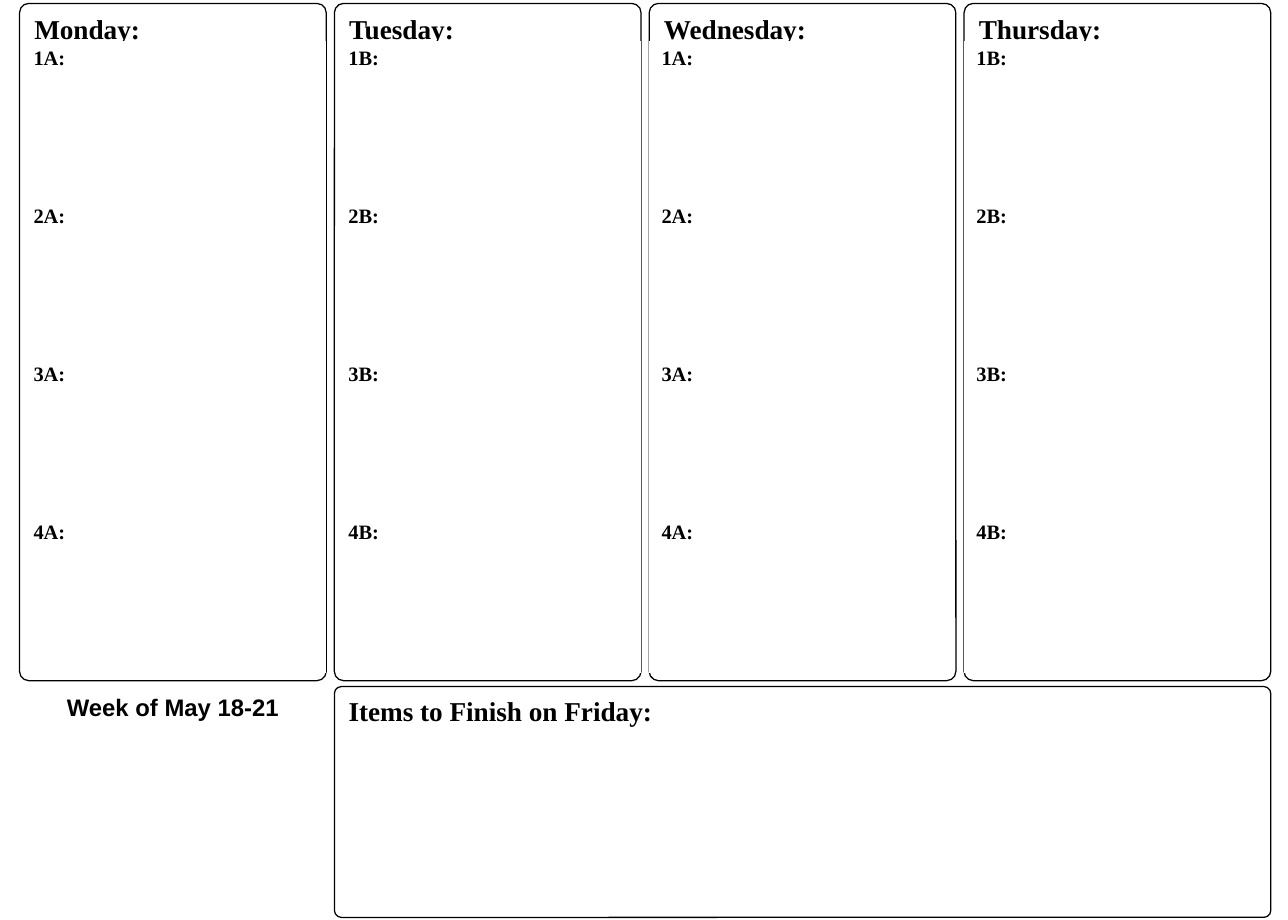
import lxml.etree
import pptx
import pptx.dml.color
import pptx.enum.shapes
import pptx.enum.text
import pptx.oxml.ns
import pptx.util

Pt = pptx.util.Pt
COLORS = {"ink": "000000", "paper": "FFFFFF"}
SERIF, SANS = "Times New Roman", "Arial"
HEADING = {"name": SERIF, "size": Pt(16), "bold": True}
PERIOD = {"name": SERIF, "size": Pt(12), "bold": True}
WEEK = {"name": SANS, "size": Pt(14), "bold": True}
FRAME = {
    "margin_left": Pt(7.2), "margin_right": Pt(7.2),
    "margin_top": Pt(3.6), "margin_bottom": Pt(3.6),
    "vertical_anchor": pptx.enum.text.MSO_ANCHOR.TOP,
}

LEFT, TOP, PITCH = 11.5, 2, 184.8
PANEL_WIDTH, PANEL_HEIGHT = 180, 397.5
TABLE_TOP, ROW_HEIGHT, PERIODS = 24, 92.7, 4
FOOTER_TOP, FOOTER_HEIGHT = 403, 135.5
# Day, block letter, table offset from the panel, table width
DAYS = [
    ("Monday", "A", 1, 178.7),
    ("Tuesday", "B", 1, 179.2),
    ("Wednesday", "A", 0, 178.7),
    ("Thursday", "B", 0, 179.2),
]


def rgb(name):
    return pptx.dml.color.RGBColor.from_string(COLORS[name])


def apply(target, values):
    for name, value in values.items():
        setattr(target, name, value)


class Planner:
    """Draws the parts of a weekly planner on one slide."""

    def __init__(self, presentation):
        layout = presentation.slide_layouts.get_by_name("Title Only")
        self.slide = presentation.slides.add_slide(layout)
        self.color = rgb("ink")

    def add_text(self, text_frame, text, font, alignment):
        paragraph = text_frame.paragraphs[0]
        paragraph.alignment = alignment
        run = paragraph.add_run()
        run.text = text
        apply(run.font, font)
        run.font.color.rgb = self.color

    def title(self, text, left, top, width, height):
        shape = self.slide.shapes.title
        apply(shape, {"left": Pt(left), "top": Pt(top), "width": Pt(width), "height": Pt(height)})
        apply(shape.text_frame, FRAME)
        apply(shape.text_frame, {"word_wrap": True, "auto_size": pptx.enum.text.MSO_AUTO_SIZE.NONE})
        self.add_text(shape.text_frame, text, WEEK, pptx.enum.text.PP_ALIGN.CENTER)

    def panel(self, text, left, top, width, height):
        shape = self.slide.shapes.add_shape(
            pptx.enum.shapes.MSO_SHAPE.ROUNDED_RECTANGLE,
            Pt(left), Pt(top), Pt(width), Pt(height))
        shape.adjustments[0] = 0.03
        shape.shadow.inherit = False
        shape.fill.background()
        shape.line.color.rgb = self.color
        shape.line.width = Pt(0.75)
        apply(shape.text_frame, FRAME)
        shape.text_frame.word_wrap = True
        self.add_text(shape.text_frame, text, HEADING, pptx.enum.text.PP_ALIGN.LEFT)

    def table(self, labels, left, top, width, row_height):
        table = self.slide.shapes.add_table(
            len(labels), 1, Pt(left), Pt(top), Pt(width), Pt(row_height * len(labels))).table
        apply(table, {"first_row": False, "horz_banding": False})
        for row, label in enumerate(labels):
            cell = table.cell(row, 0)
            self.clear_borders(cell)
            cell.fill.solid()
            cell.fill.fore_color.rgb = rgb("paper")
            apply(cell, FRAME)
            self.add_text(cell.text_frame, label, PERIOD, pptx.enum.text.PP_ALIGN.LEFT)

    def clear_borders(self, cell):
        properties = cell._tc.get_or_add_tcPr()
        for side in ("L", "R", "T", "B"):
            border = lxml.etree.SubElement(properties, pptx.oxml.ns.qn(f"a:ln{side}"))
            lxml.etree.SubElement(border, pptx.oxml.ns.qn("a:noFill"))


def main():
    presentation = pptx.Presentation()
    presentation.slide_width, presentation.slide_height = Pt(756), Pt(540)
    planner = Planner(presentation)

    planner.title("Week of May 18-21", LEFT, FOOTER_TOP, PANEL_WIDTH, FOOTER_HEIGHT)
    for column, (day, block, offset, width) in enumerate(DAYS):
        planner.panel(f"{day}:", LEFT + column * PITCH, TOP, PANEL_WIDTH, PANEL_HEIGHT)
    planner.panel("Items to Finish on Friday:", LEFT + PITCH, FOOTER_TOP,
                  2 * PITCH + PANEL_WIDTH, FOOTER_HEIGHT)
    for column, (day, block, offset, width) in enumerate(DAYS):
        labels = [f"{period}{block}:" for period in range(1, PERIODS + 1)]
        planner.table(labels, LEFT + column * PITCH + offset, TABLE_TOP, width, ROW_HEIGHT)

    presentation.save("out.pptx")


if __name__ == "__main__":
    main()
